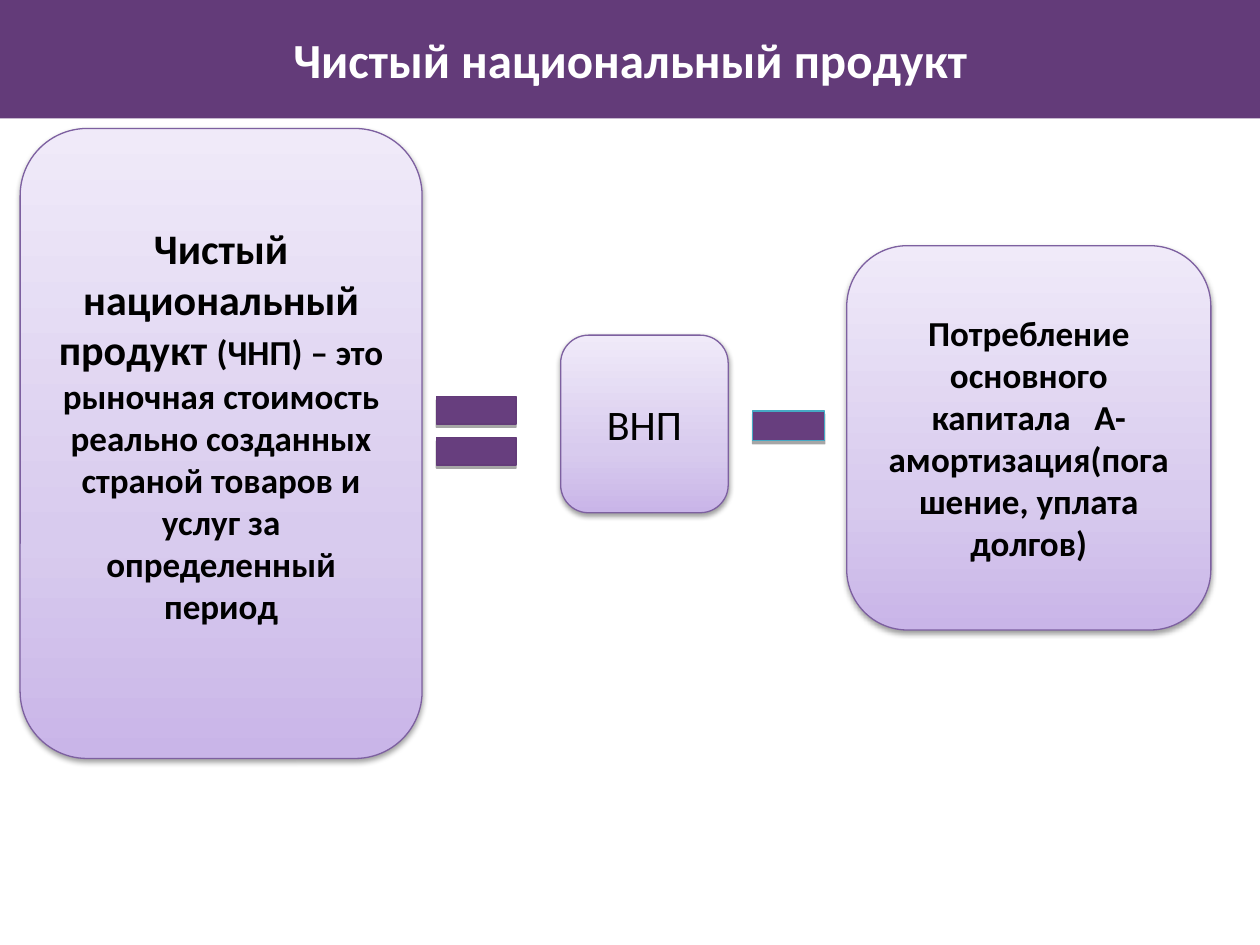
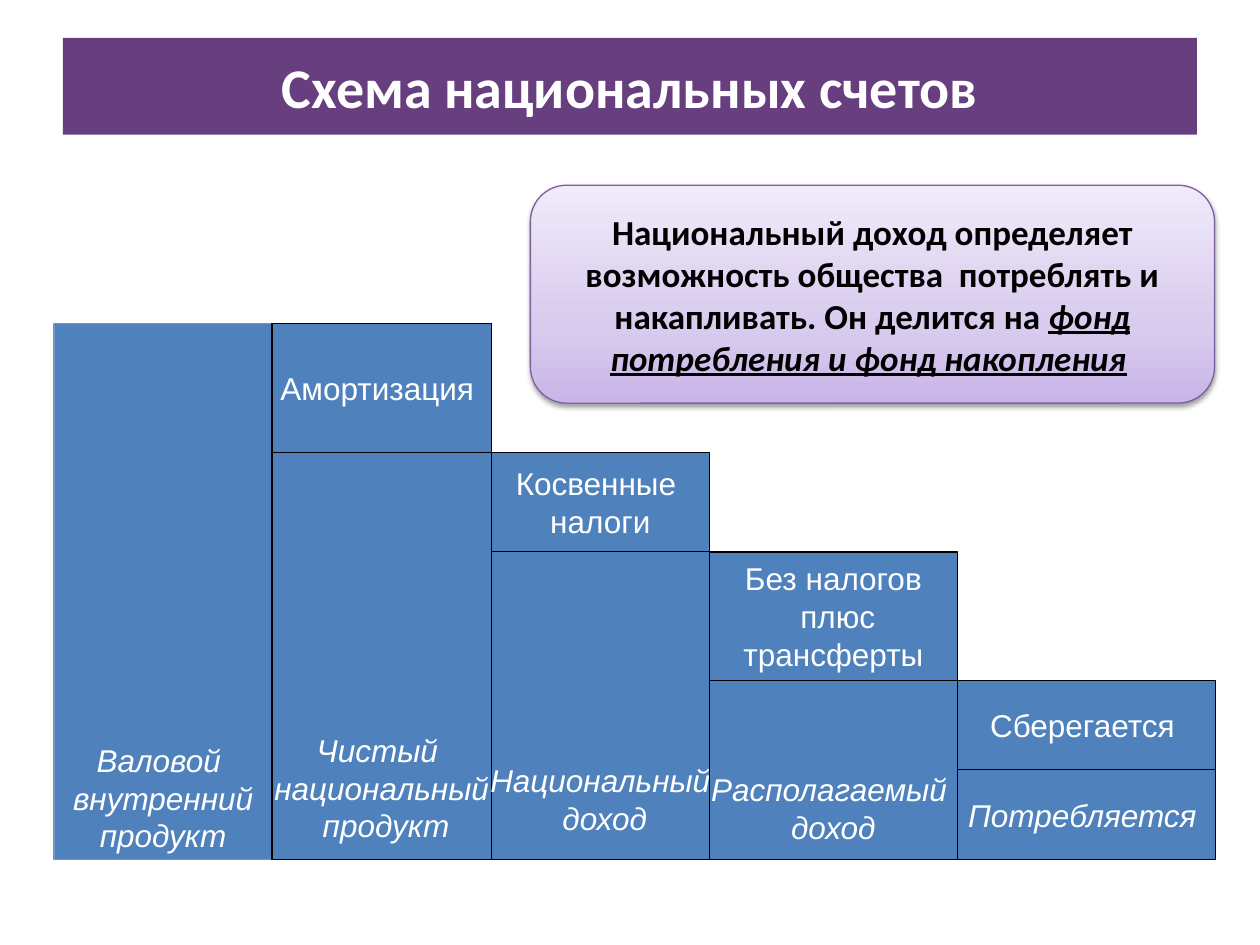
from copy import deepcopy

from lxml.etree import SubElement
from pptx import Presentation
from pptx.dml.color import RGBColor
from pptx.enum.shapes import MSO_SHAPE
from pptx.enum.text import MSO_ANCHOR, PP_ALIGN
from pptx.oxml.ns import qn
from pptx.util import Inches, Pt

WHITE = RGBColor(0xFF, 0xFF, 0xFF)
BLACK = RGBColor(0x00, 0x00, 0x00)
DEEP_PURPLE = RGBColor(0x63, 0x3B, 0x79)
PURPLE = RGBColor(0x67, 0x3E, 0x7E)
CARD_EDGE = RGBColor(0x7D, 0x60, 0xA0)
TEAL = RGBColor(0x46, 0xAA, 0xC5)
BLUE = RGBColor(0x4F, 0x81, 0xBD)
LIGHT_BLUE = RGBColor(0x6E, 0x97, 0xC8)
CARD_GRADIENT = [
    (0, RGBColor(0xC9, 0xB5, 0xE8)),
    (0.35, RGBColor(0xD8, 0xCB, 0xEE)),
    (1, RGBColor(0xF0, 0xEA, 0xF9)),
]


class Deck:
    heading_font = "Calibri"
    account_font = "Arial"

    def __init__(self):
        self.presentation = Presentation()
        self.presentation.slide_width = Inches(10)
        self.presentation.slide_height = Inches(7.5)
        self.slide = None

    def new_slide(self):
        self.slide = self.presentation.slides.add_slide(self.presentation.slide_layouts[6])

    def shape(self, kind, box, fill=None, line=None):
        shape = self.slide.shapes.add_shape(kind, *map(Inches, box))
        shape.shadow.inherit = False
        if fill is not None:
            shape.fill.solid()
            shape.fill.fore_color.rgb = fill
        if line is None:
            shape.line.fill.background()
        else:
            shape.line.color.rgb = line
            shape.line.width = Pt(0.75)
        return shape

    def shadow(self, shape, opacity, blur, distance):
        effects = shape._element.spPr.find(qn("a:effectLst"))
        outer = SubElement(effects, qn("a:outerShdw"), blurRad=str(Pt(blur)),
                           dist=str(Pt(distance)), dir="5400000", rotWithShape="0")
        color = SubElement(outer, qn("a:srgbClr"), val=str(BLACK))
        SubElement(color, qn("a:alpha"), val=str(opacity * 1000))

    def format_runs(self, paragraph, font, color):
        paragraph.alignment = PP_ALIGN.CENTER
        for run in paragraph.runs:
            run.font.name = font
            run.font.color.rgb = color

    def title(self, text, box, fill, size):
        band = self.shape(MSO_SHAPE.RECTANGLE, box, fill)
        band.text_frame.text = text
        heading = band.text_frame.paragraphs[0]
        self.format_runs(heading, self.heading_font, WHITE)
        heading.runs[0].font.size = Pt(size)
        heading.runs[0].font.bold = True

    def card(self, box, parts, bold=True, bottom_inset=0.05):
        card = self.shape(MSO_SHAPE.ROUNDED_RECTANGLE, box, line=CARD_EDGE)
        card.fill.gradient()
        card.fill.gradient_angle = 90
        stops = card._element.spPr.find(".//" + qn("a:gsLst"))
        stops.insert(1, deepcopy(stops[0]))
        for stop, (position, color) in zip(card.fill.gradient_stops, CARD_GRADIENT):
            stop.position = position
            stop.color.rgb = color
        self.shadow(card, 38, 3.1, 1.6)
        frame = card.text_frame
        frame.word_wrap = True
        frame.margin_bottom = Inches(bottom_inset)
        for text, size, emphasis in parts:
            run = frame.paragraphs[0].add_run()
            run.text = text
            run.font.size = Pt(size)
            run.font.bold = bold
            run.font.italic = run.font.underline = emphasis
        self.format_runs(frame.paragraphs[0], self.heading_font, BLACK)

    def sign(self, kind, box, line):
        self.shadow(self.shape(kind, box, PURPLE, line), 35, 0, 1.8)

    def account(self, box, text, line=BLACK, italic=False, bottom_inset=None):
        account = self.shape(MSO_SHAPE.RECTANGLE, box, BLUE, line)
        frame = account.text_frame
        frame.word_wrap = False
        frame.text = text
        if bottom_inset is not None:
            frame.vertical_anchor = MSO_ANCHOR.BOTTOM
            frame.margin_bottom = Inches(bottom_inset)
        for paragraph in frame.paragraphs:
            self.format_runs(paragraph, self.account_font, WHITE)
            for run in paragraph.runs:
                run.font.size = Pt(18)
                run.font.italic = italic


def build_net_product(deck):
    deck.new_slide()
    deck.title("Чистый национальный продукт", (0, 0, 10, 0.94), DEEP_PURPLE, 28)
    deck.card((0.16, 1.02, 3.19, 5), [
        ("Чистый национальный продукт ", 24, False),
        ("(ЧНП) – это рыночная стоимость реально созданных страной товаров "
         "и услуг за определенный период", 20, False),
    ], bottom_inset=0.35)
    deck.card((4.45, 2.66, 1.33, 1.41), [("ВНП", 24, False)], bold=False)
    deck.card((6.72, 1.95, 2.89, 3.05), [
        ("Потребление основного капитала   А- амортизация(погашение, уплата долгов)", 20, False),
    ])
    deck.sign(MSO_SHAPE.MATH_EQUAL, (3.35, 2.96, 0.86, 0.92), DEEP_PURPLE)
    deck.sign(MSO_SHAPE.MATH_MINUS, (5.87, 2.88, 0.78, 1), TEAL)


def build_accounts(deck):
    deck.new_slide()
    deck.title("Схема национальных счетов", (0.5, 0.3, 9, 0.77), PURPLE, 32)
    column_edges = [0.43, 2.16, 3.9, 5.63, 7.6, 9.65]
    step_tops = [2.57, 3.59, 4.38, 5.4, 6.11]
    base = 6.82
    columns = [
        (None, "Валовой \nвнутренний\n продукт ", 0.04),
        ("Амортизация ", "Чистый \nнациональный\n продукт", 0.12),
        ("Косвенные \nналоги", "Национальный\n доход", 0.18),
        ("Без налогов\n плюс\nтрансферты", "Располагаемый \nдоход", 0.11),
        ("Сберегается ", "Потребляется ", None),
    ]
    for index, (deduction, remainder, inset) in enumerate(columns):
        left, top = column_edges[index], step_tops[index]
        width = column_edges[index + 1] - left
        if deduction:
            previous_top = step_tops[index - 1]
            deck.account((left, previous_top, width, top - previous_top), deduction)
        deck.account((left, top, width, base - top), remainder,
                     line=BLACK if deduction else LIGHT_BLUE,
                     italic=True, bottom_inset=inset)
    deck.card((4.21, 1.47, 5.43, 1.73), [
        ("Национальный доход определяет возможность общества  потреблять "
         "и накапливать. Он делится на ", 20, False),
        ("фонд потребления и фонд накопления", 20, True),
        (" ", 20, False),
    ])


def main():
    deck = Deck()
    build_net_product(deck)
    build_accounts(deck)
    deck.presentation.save("out.pptx")


if __name__ == "__main__":
    main()
